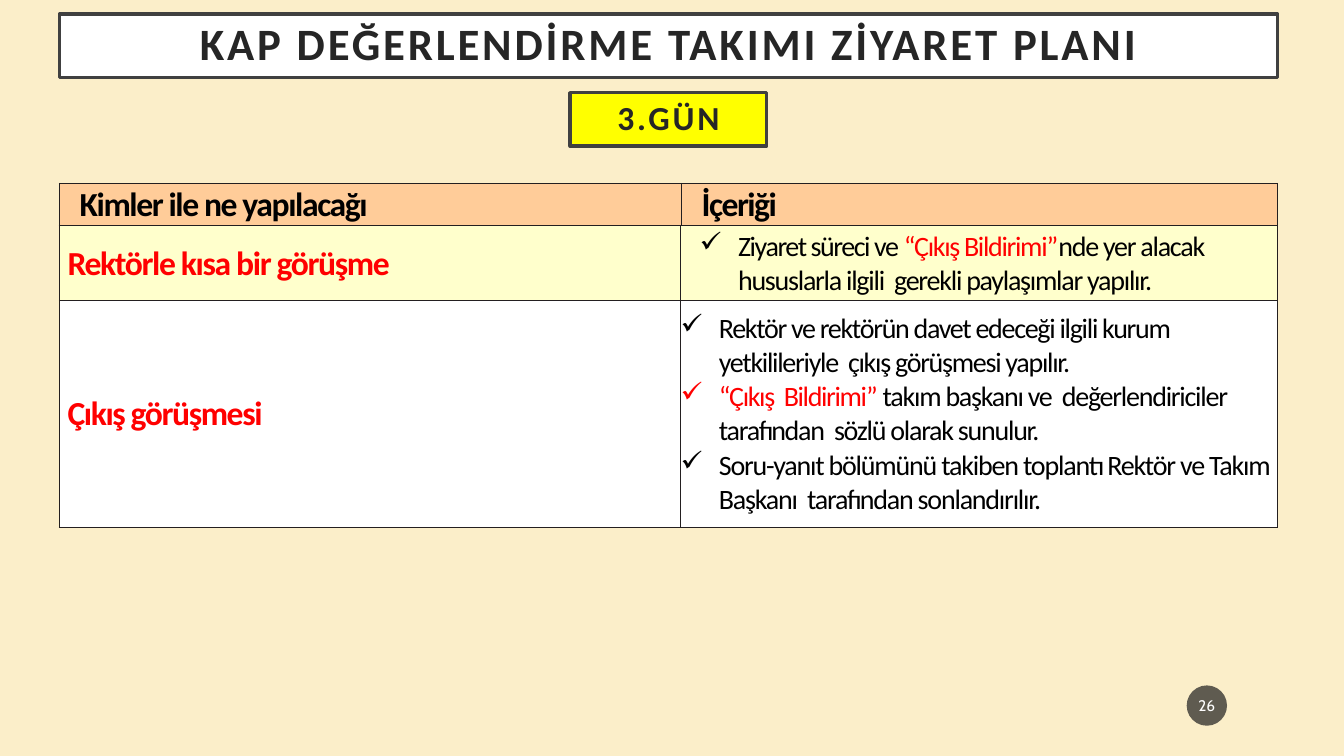
"""Build the third-day visit plan slide."""
from lxml.etree import SubElement
from pptx import Presentation
from pptx.dml.color import RGBColor
from pptx.enum.shapes import MSO_SHAPE
from pptx.enum.text import MSO_ANCHOR, PP_ALIGN
from pptx.oxml.ns import qn
from pptx.util import Emu, Inches, Pt

COLORS = {
    "page": "FBEEC9", "white": "FFFFFF", "yellow": "FFFF00", "frame": "404040",
    "heading": "262626", "badge": "1D1D1D", "header": "FFCC99", "cream": "FFFFCC",
    "rule": "231F20", "black": "000000", "red": "FF0000",
}
TITLE = "KAP DEĞERLENDİRME TAKIMI ZİYARET PLANI"
DAY = "3.GÜN"
PAGE_NUMBER = "26"

HEADER = [("header", [
    {"size": 24, "left": 0.2, "before": 1.6, "paragraphs": [[("Kimler ile ne yapılacağı", -1, "black")]]},
    {"size": 24, "left": 0.2, "before": 1.6, "paragraphs": [[("İçeriği", -1.1, "black")]]},
])]
VISITS = [
    ("cream", [
        {"size": 24, "left": 0.08, "paragraphs": [[("Rektörle kısa bir görüşme", -0.95, "red")]]},
        {"size": 20, "left": 0.57, "before": 1.6, "check": True, "paragraphs": [[
            ("Ziyaret süreci ve ", -1.05, "black"),
            ("“Çıkış Bildirimi”", -0.95, "red"),
            ("nde yer alacak hususlarla ilgili  gerekli paylaşımlar yapılır.", -0.9, "black"),
        ]]},
    ]),
    ("white", [
        {"size": 24, "left": 0.08, "paragraphs": [[("Çıkış görüşmesi", -1, "red")]]},
        {"size": 20, "left": 0.38, "check": True, "paragraphs": [
            [("Rektör ve rektörün davet edeceği ilgili kurum yetkilileriyle  "
              "çıkış görüşmesi yapılır.", -0.93, "black")],
            [("“Çıkış  Bildirimi” ", -1, "red"),
             ("takım başkanı ve  değerlendiriciler tarafından  "
              "sözlü olarak sunulur.", -0.9, "black")],
            [("Soru-yanıt bölümünü takiben toplantı Rektör ve "
              "Takım Başkanı  tarafından sonlandırılır.", -0.87, "black")],
        ]},
    ]),
]
LEFT, WIDTH, HANGING = 0.59, 12.08, 0.38


def rgb(name):
    return RGBColor.from_string(COLORS[name])


def write_run(paragraph, text, spacing=0, color=None):
    run = paragraph.add_run()
    run.text = text
    if spacing:
        run._r.get_or_add_rPr().set("spc", str(round(spacing * 100)))
    if color:
        run.font.color.rgb = rgb(color)


def set_font(paragraph, face, size, bold, color=None):
    paragraph.font.name = face
    paragraph.font.size = Pt(size)
    paragraph.font.bold = bold
    if color:
        paragraph.font.color.rgb = rgb(color)


def add_label(slide, preset, box, fill, text, face, size, color, inset, bold=False, spacing=0):
    label = slide.shapes.add_shape(preset, *map(Inches, box))
    label.shadow.inherit = False
    label.fill.solid()
    label.fill.fore_color.rgb = rgb(fill)
    frame = label.text_frame
    frame.word_wrap = True
    frame.vertical_anchor = MSO_ANCHOR.MIDDLE
    frame.margin_left = frame.margin_right = Inches(inset)
    frame.margin_top = frame.margin_bottom = Inches(0.05)
    paragraph = frame.paragraphs[0]
    paragraph.alignment = PP_ALIGN.CENTER
    set_font(paragraph, face, size, bold, color)
    write_run(paragraph, text, spacing)
    return label


def add_banner(slide, box, fill, text, size):
    banner = add_label(slide, MSO_SHAPE.RECTANGLE, box, fill, text, "Calibri", size,
                       "heading", 0.2, bold=True, spacing=2)
    banner.line.color.rgb = rgb("frame")
    banner.line.width = Pt(2.5)
    banner.text_frame.paragraphs[0].line_spacing = 0.9


def fill_cell(cell, content, fill):
    properties = cell._tc.get_or_add_tcPr()
    for side in ("a:lnL", "a:lnR", "a:lnT", "a:lnB"):
        border = SubElement(properties, qn(side), w=str(Pt(1)))
        SubElement(SubElement(border, qn("a:solidFill")), qn("a:srgbClr"), val=COLORS["rule"])
    cell.fill.solid()
    cell.fill.fore_color.rgb = rgb(fill)
    cell.vertical_anchor = MSO_ANCHOR.MIDDLE
    cell.margin_left = cell.margin_right = cell.margin_bottom = Emu(0)
    cell.margin_top = Inches(0.01)
    checked = content.get("check", False)
    for index, runs in enumerate(content["paragraphs"]):
        paragraph = cell.text_frame.add_paragraph() if index else cell.text_frame.paragraphs[0]
        layout = paragraph._p.get_or_add_pPr()
        layout.set("marL", str(Inches(content["left"])))
        layout.set("indent", str(Inches(-HANGING) if checked else 0))
        if checked:
            SubElement(layout, qn("a:buChar"), char="✓")
        paragraph.space_before = Pt(content.get("before", 0))
        set_font(paragraph, "Calibri", content["size"], not checked)
        for run in runs:
            write_run(paragraph, *run)


def add_plan(slide, rows, top, first_column, heights):
    frame = slide.shapes.add_table(len(rows), 2, Inches(LEFT), Inches(top),
                                   Inches(WIDTH), Inches(sum(heights)))
    plan = frame.table
    plan.first_row = plan.horz_banding = False
    for column, width in zip(plan.columns, (first_column, WIDTH - first_column)):
        column.width = Inches(width)
    for row, height, (fill, contents) in zip(plan.rows, heights, rows):
        row.height = Inches(height)
        for cell, content in zip(row.cells, contents):
            fill_cell(cell, content, fill)


def main():
    deck = Presentation()
    deck.slide_width, deck.slide_height = Inches(13.33), Inches(7.5)
    slide = deck.slides.add_slide(deck.slide_layouts[6])
    slide.background.fill.solid()
    slide.background.fill.fore_color.rgb = rgb("page")

    badge = add_label(slide, MSO_SHAPE.OVAL, (11.77, 6.8, 0.4, 0.4), "badge",
                      PAGE_NUMBER, "Cabin", 11, "white", 0.02)
    badge.line.fill.background()
    badge_color = badge._element.spPr.find(qn("a:solidFill"))[0]
    SubElement(badge_color, qn("a:alpha"), val="70000")

    day_width = 1.95
    add_banner(slide, (LEFT, 0.14, WIDTH, 0.63), "white", TITLE, 32)
    add_banner(slide, (LEFT + (WIDTH - day_width) / 2, 0.92, day_width, 0.53), "yellow", DAY, 24)
    add_plan(slide, HEADER, 1.82, 6.17, [0.42])
    add_plan(slide, VISITS, 2.24, 6.16, [0.74, 2.25])
    deck.save("out.pptx")


if __name__ == "__main__":
    main()
